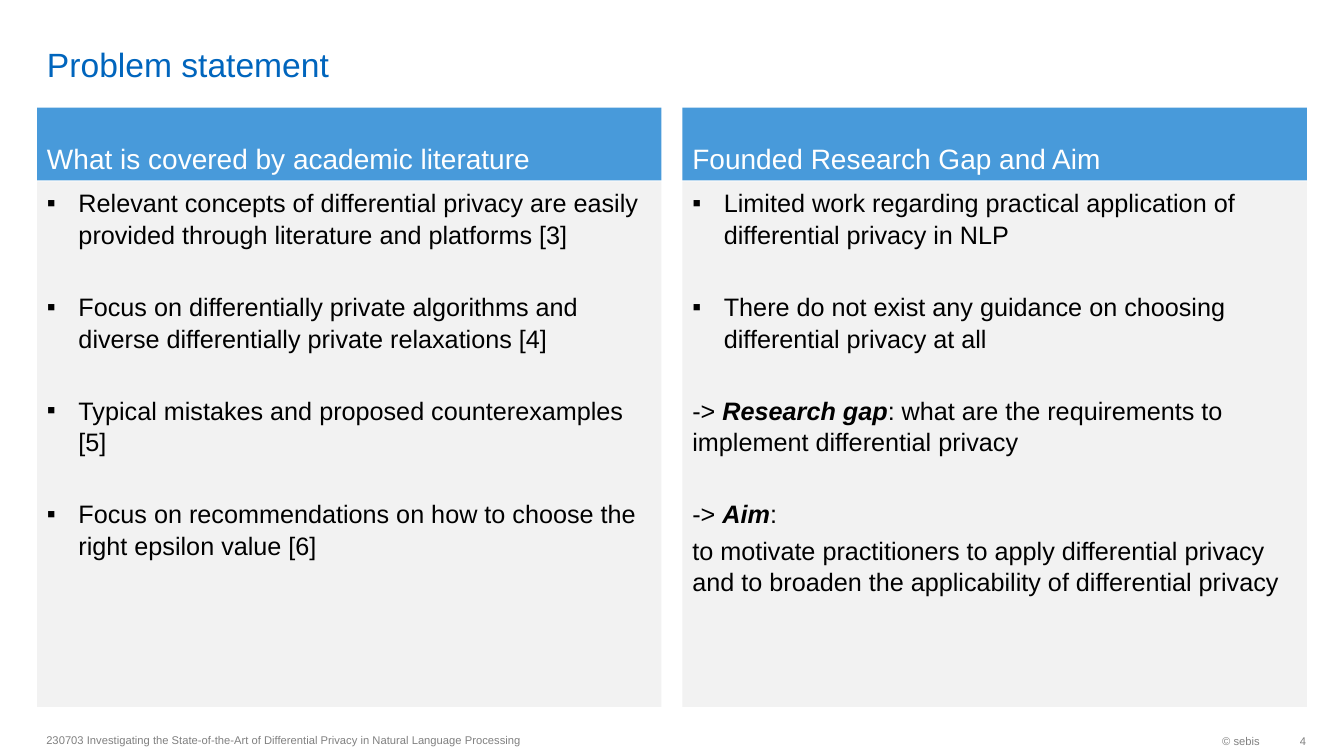
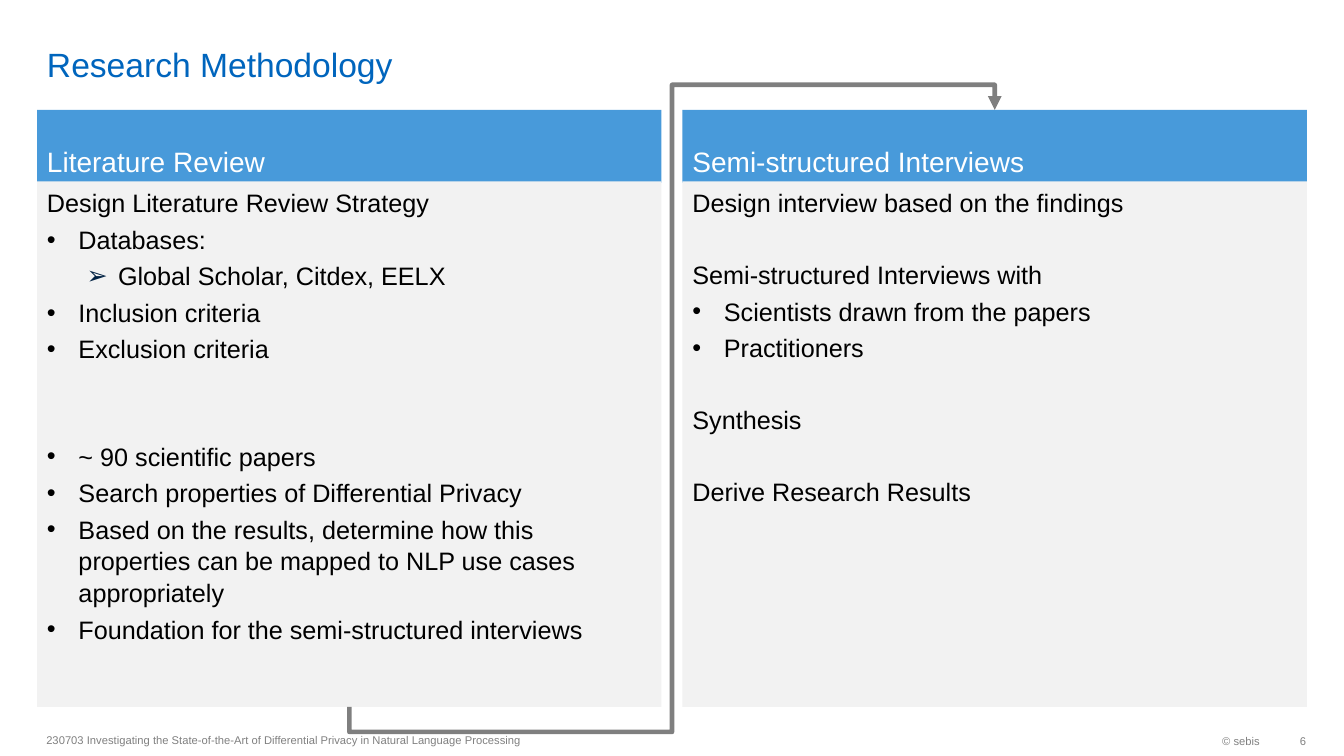
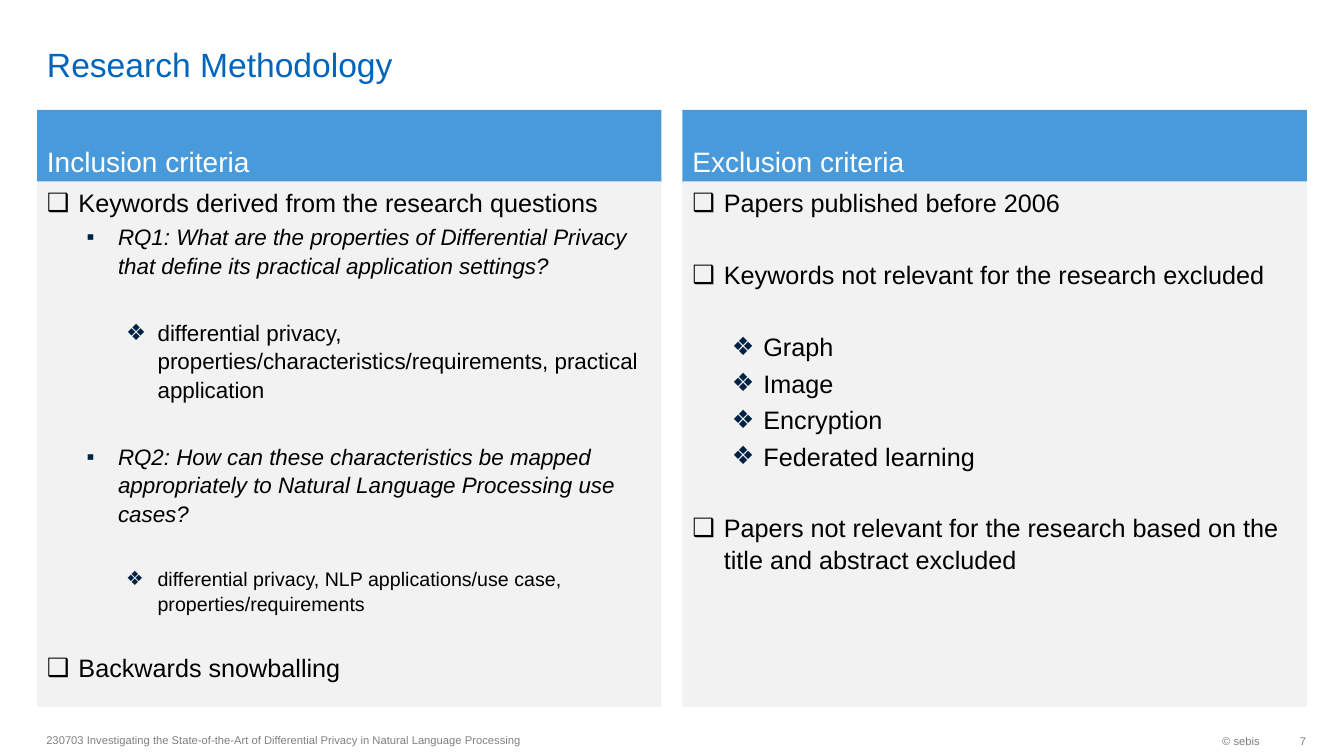
from dataclasses import dataclass

from lxml import etree
from pptx import Presentation
from pptx.dml.color import RGBColor
from pptx.enum import shapes, text
from pptx.oxml.ns import qn
from pptx.util import Pt


# Theme
class Theme:
    font = "Arial"
    title, white, black = "0065BD", "FFFFFF", "000000"
    header, panel, navy, grey = "489ADA", "F2F2F2", "002143", "808080"
    title_size, header_size, body_size, footer_size = 24, 20, 18, 8
    line_spacing = 1.05
    before = 0.19      # space before a line, as a share of its size
    blank = 1.4        # height of an empty row, as a share of its size


@dataclass
class Line:
    words: str         # *starred* words are bold italic
    mark: str = ""
    level: int = 0
    gap: int = 0       # total type size of the empty rows above
    size: int = Theme.body_size
    italic: bool = False


# Content
FOOTER = "230703 Investigating the State-of-the-Art of Differential Privacy in Natural Language Processing"
OWNER = "© sebis"
SQUARE, DOT, ARROW, CHECK, DIAMOND = "▪•➢❑❖"

SLIDES = [
    dict(number=4, title="Problem statement", header_top=77, columns=[
        ("What is covered by academic literature", [
            Line("Relevant concepts of differential privacy are easily provided through literature and platforms [3]", SQUARE),
            Line("Focus on differentially private algorithms and diverse differentially private relaxations [4]", SQUARE, gap=18),
            Line("Typical mistakes and proposed counterexamples [5]", SQUARE, gap=18),
            Line("Focus on recommendations on how to choose the right epsilon value [6]", SQUARE, gap=18),
        ]),
        ("Founded Research Gap and Aim", [
            Line("Limited work regarding practical application of differential privacy in NLP", SQUARE),
            Line("There do not exist any guidance on choosing differential privacy at all", SQUARE, gap=18),
            Line("-> *Research gap*: what are the requirements to implement differential privacy", gap=18),
            Line("-> *Aim*:", gap=18),
            Line("to motivate practitioners to apply differential privacy and to broaden the applicability of differential privacy"),
        ]),
    ]),
    dict(number=6, title="Research Methodology", header_top=78.5, linked=True, columns=[
        ("Literature Review", [
            Line("Design Literature Review Strategy"),
            Line("Databases:", DOT),
            Line("Global Scholar, Citdex, EELX", ARROW, 1),
            Line("Inclusion criteria", DOT),
            Line("Exclusion criteria", DOT),
            Line("~ 90 scientific papers", DOT, gap=36),
            Line("Search properties of Differential Privacy", DOT),
            Line("Based on the results, determine how this properties can be mapped to NLP use cases appropriately", DOT),
            Line("Foundation for the semi-structured interviews", DOT),
        ]),
        ("Semi-structured Interviews", [
            Line("Design interview based on the findings"),
            Line("Semi-structured Interviews with", gap=18),
            Line("Scientists drawn from the papers", DOT),
            Line("Practitioners", DOT),
            Line("Synthesis", gap=18),
            Line("Derive Research Results", gap=18),
        ]),
    ]),
    dict(number=7, title="Research Methodology", header_top=78.5, columns=[
        ("Inclusion criteria", [
            Line("Keywords derived from the research questions", CHECK),
            Line("RQ1: What are the properties of Differential Privacy that define its practical application settings?",
                 SQUARE, 1, size=16, italic=True),
            Line("differential privacy, properties/characteristics/requirements, practical application",
                 DIAMOND, 2, gap=18, size=16),
            Line("RQ2: How can these characteristics be mapped appropriately to Natural Language Processing use cases?",
                 SQUARE, 1, gap=18, size=16, italic=True),
            Line("differential privacy, NLP applications/use case, properties/requirements",
                 DIAMOND, 2, gap=18, size=14),
            Line("Backwards snowballing", CHECK, gap=16),
        ]),
        ("Exclusion criteria", [
            Line("Papers published before 2006", CHECK),
            Line("Keywords not relevant for the research excluded", CHECK, gap=18),
            Line("Graph", DIAMOND, 1, gap=18),
            Line("Image", DIAMOND, 1),
            Line("Encryption", DIAMOND, 1),
            Line("Federated learning", DIAMOND, 1),
            Line("Papers not relevant for the research based on the title and abstract excluded", CHECK, gap=18),
        ]),
    ]),
]

# Layout, in points
PAGE_WIDTH, PAGE_HEIGHT = 960, 540
MARGIN, COLUMN_WIDTH, COLUMN_STEP = 26.5, 446, 461
HEADER_HEIGHT, PANEL_TOP, PANEL_HEIGHT = 52, 129.5, 375.5
HANG, LEVEL_STEP = 22.5, 28.25
DETOUR = 18


def rgb(value):
    return RGBColor.from_string(value)


def style(span, size, color, bold=False, italic=False):
    font = span.font
    font.name, font.size, font.bold, font.italic = Theme.font, Pt(size), bold, italic
    font.color.rgb = rgb(color)


def prepare(box, anchor, insets=(7.2, 3.6, 7.2, 3.6)):
    frame = box.text_frame
    frame.word_wrap = True
    frame.vertical_anchor = anchor
    frame.margin_left, frame.margin_top, frame.margin_right, frame.margin_bottom = map(Pt, insets)
    return frame


def add_label(page, place, words, size, color, anchor=text.MSO_ANCHOR.MIDDLE,
              align=text.PP_ALIGN.LEFT, **options):
    box = page.shapes.add_textbox(*map(Pt, place))
    para = prepare(box, anchor, **options).paragraphs[0]
    para.text = words
    para.alignment = align
    style(para.runs[0], size, color)


def add_panel(page, place, fill):
    box = page.shapes.add_shape(shapes.MSO_SHAPE.RECTANGLE, *map(Pt, place))
    box.shadow.inherit = False
    box.fill.solid()
    box.fill.fore_color.rgb = rgb(fill)
    box.line.fill.background()
    return box


def add_bullet(para, line):
    props = para._p.get_or_add_pPr()
    props.set("marL", str(Pt(HANG + LEVEL_STEP * line.level)))
    props.set("indent", str(-Pt(HANG)))
    color = etree.SubElement(props, qn("a:buClr"))
    etree.SubElement(color, qn("a:srgbClr"), val=Theme.navy if line.level else Theme.black)
    etree.SubElement(props, qn("a:buFont"), typeface=Theme.font)
    etree.SubElement(props, qn("a:buChar"), char=line.mark)


def write_lines(box, lines):
    frame = prepare(box, text.MSO_ANCHOR.TOP)
    for index, line in enumerate(lines):
        para = frame.add_paragraph() if index else frame.paragraphs[0]
        para.alignment = text.PP_ALIGN.LEFT
        para.line_spacing = Theme.line_spacing
        if index:
            para.space_before = Pt(round(Theme.before * line.size + Theme.blank * line.gap, 1))
        if line.mark:
            add_bullet(para, line)
        for part, words in enumerate(line.words.split("*")):
            strong = part % 2 == 1
            span = para.add_run()
            span.text = words
            style(span, line.size, Theme.black, strong, strong or line.italic)


def add_column(page, left, header_top, heading, lines):
    header = add_panel(page, (left, header_top, COLUMN_WIDTH, HEADER_HEIGHT), Theme.header)
    para = prepare(header, text.MSO_ANCHOR.BOTTOM).paragraphs[0]
    para.text = heading
    para.alignment = text.PP_ALIGN.LEFT
    para.line_spacing = Theme.line_spacing
    style(para.runs[0], Theme.header_size, Theme.white)
    panel = add_panel(page, (left, PANEL_TOP, COLUMN_WIDTH, PANEL_HEIGHT), Theme.panel)
    write_lines(panel, lines)
    return header, panel


def add_detour(page, source, target):
    """Arrow from the bottom of source, between the columns, to the top of target."""
    arrow = page.shapes.add_connector(shapes.MSO_CONNECTOR.ELBOW, 0, 0, 0, 0)
    arrow.begin_connect(source, 2)
    arrow.end_connect(target, 0)
    start_x, start_y, end_x, end_y = arrow.begin_x, arrow.begin_y, arrow.end_x, arrow.end_y
    # The five-part elbow starts sideways, so its frame is turned a quarter
    run, rise = end_x - start_x, start_y - end_y
    arrow.left = (start_x + end_x - rise) // 2
    arrow.top = (start_y + end_y - run) // 2
    arrow.width, arrow.height = rise, run
    props = arrow._element.spPr
    frame = props.find(qn("a:xfrm"))
    for name, value in (("rot", "5400000"), ("flipH", "1"), ("flipV", "1")):
        frame.set(name, value)
    shape = props.find(qn("a:prstGeom"))
    shape.set("prst", "bentConnector5")
    for child in list(shape):
        shape.remove(child)
    guides = etree.SubElement(shape, qn("a:avLst"))
    overshoot = round(Pt(DETOUR) / rise * 100000)
    for number, value in enumerate((-overshoot, 50000, 100000 + overshoot), 1):
        etree.SubElement(guides, qn("a:gd"), name=f"adj{number}", fmla=f"val {value}")
    # Half-transparent line with an arrowhead and no shadow
    arrow.line.width = Pt(3.25)
    arrow.line.color.rgb = rgb(Theme.black)
    stroke = props.find(qn("a:ln"))
    etree.SubElement(stroke.find(".//" + qn("a:srgbClr")), qn("a:alpha"), val="50000")
    etree.SubElement(stroke, qn("a:tailEnd"), type="triangle")
    etree.SubElement(props, qn("a:effectLst"))


def add_frame(page, title, number):
    """Title and footer shared by all slides."""
    add_label(page, (MARGIN, 3.5, 834, 57), title, Theme.title_size, Theme.title,
              text.MSO_ANCHOR.BOTTOM, insets=(7.2, 0, 7.2, 0))
    small = (Theme.footer_size, Theme.grey)
    right = text.PP_ALIGN.RIGHT
    add_label(page, (739, 517.5, 168, 23), OWNER, *small, align=right)
    add_label(page, (26, 517.25, 454, 23), FOOTER, *small)
    add_label(page, (907, 517.5, 26, 23), str(number), *small, align=right,
              insets=(7.2, 3.6, 0, 3.6))


def main():
    deck = Presentation()
    deck.slide_width, deck.slide_height = Pt(PAGE_WIDTH), Pt(PAGE_HEIGHT)
    for content in SLIDES:
        page = deck.slides.add_slide(deck.slide_layouts[6])
        columns = [
            add_column(page, MARGIN + COLUMN_STEP * index, content["header_top"], heading, lines)
            for index, (heading, lines) in enumerate(content["columns"])
        ]
        add_frame(page, content["title"], content["number"])
        if content.get("linked"):
            (_, source), (target, _) = columns
            add_detour(page, source, target)
    deck.save("out.pptx")


if __name__ == "__main__":
    main()
